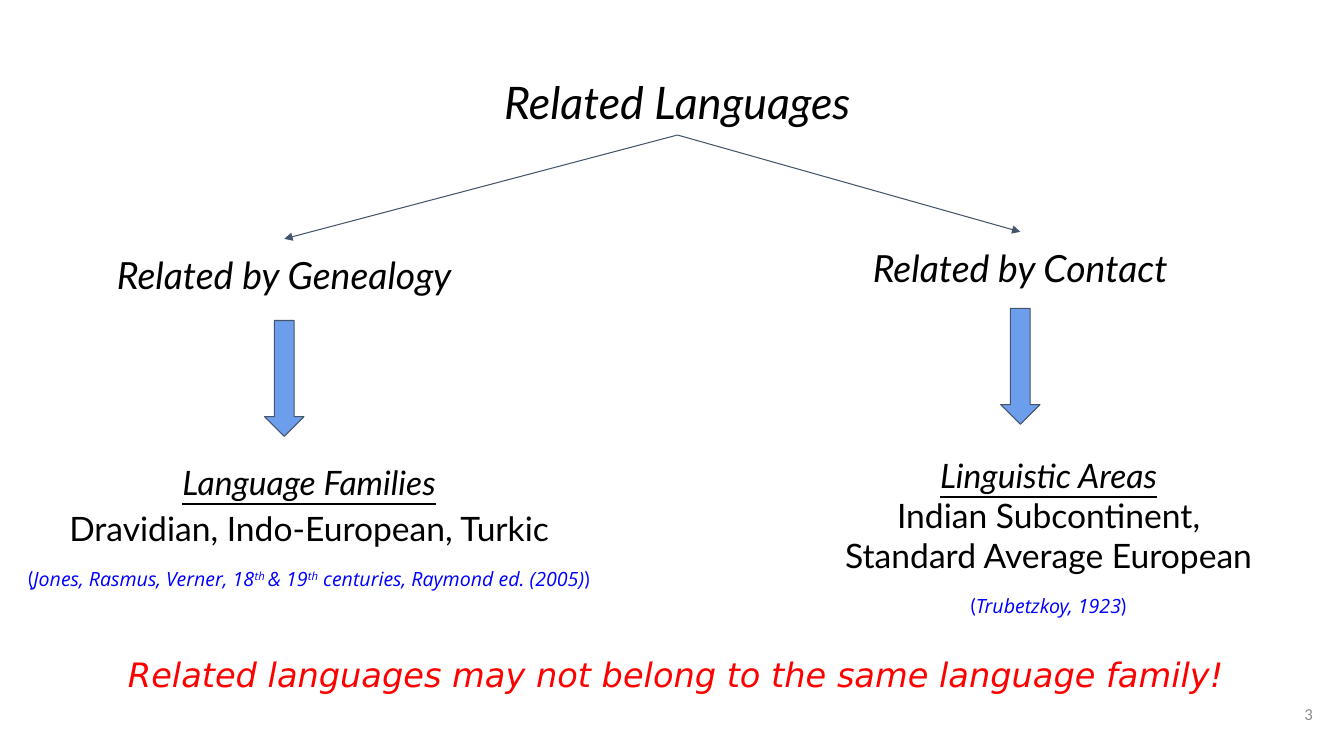
"""Build a slide that contrasts genealogical and contact relations of languages."""
import pptx
import pptx.dml.color
import pptx.enum.shapes
import pptx.enum.text
import pptx.oxml.ns
import pptx.util
from lxml import etree

SLIDE_WIDTH = pptx.util.Inches(13.33)
SLIDE_HEIGHT = pptx.util.Inches(7.5)
BLACK = pptx.dml.color.RGBColor(0x00, 0x00, 0x00)
BLUE = pptx.dml.color.RGBColor(0x00, 0x00, 0xFF)
RED = pptx.dml.color.RGBColor(0xFF, 0x00, 0x00)
GREY = pptx.dml.color.RGBColor(0x8C, 0x8C, 0x8C)
SLATE = pptx.dml.color.RGBColor(0x44, 0x54, 0x6A)
ARROW_BLUE = pptx.dml.color.RGBColor(0x6D, 0x9E, 0xEB)
ALIGN = pptx.enum.text.PP_ALIGN
ANCHOR = pptx.enum.text.MSO_ANCHOR

TITLE_CENTER = 50.41
TITLE_TOP = 8.13
LINE_BOX_HEIGHT = 9.73
HEADING_WIDTH = 43.06
ARROW_WIDTH = 2.93
ARROW_HEIGHT = 15.33
DETAILS_HEIGHT = 30.67


def across(percent):
    return round(SLIDE_WIDTH * percent / 100)


def down(percent):
    return round(SLIDE_HEIGHT * percent / 100)


def place(left, top, width, height):
    return across(left), down(top), across(width), down(height)


def add_text_box(slide, box, anchor=ANCHOR.TOP):
    frame = slide.shapes.add_textbox(*place(*box)).text_frame
    frame.word_wrap = True
    frame.vertical_anchor = anchor
    frame.margin_left = frame.margin_right = pptx.util.Inches(0.13)
    frame.margin_top = frame.margin_bottom = pptx.util.Inches(0.13)
    return frame


def add_run(paragraph, text, size, color=BLACK, font="Lato", italic=False,
            underline=False, raised=False):
    run = paragraph.add_run()
    run.text = text
    run.font.size = pptx.util.Pt(size)
    run.font.name = font
    run.font.color.rgb = color
    run.font.italic = italic
    run.font.underline = underline
    if raised:
        run.font._element.set("baseline", "30000")


def add_line(slide, box, text, size, align=ALIGN.CENTER, anchor=ANCHOR.TOP, **style):
    paragraph = add_text_box(slide, box, anchor).paragraphs[0]
    paragraph.alignment = align
    add_run(paragraph, text, size, **style)


def add_branch_line(slide, center, bottom):
    start = across(TITLE_CENTER), down(TITLE_TOP + LINE_BOX_HEIGHT)
    connector = slide.shapes.add_connector(
        pptx.enum.shapes.MSO_CONNECTOR.STRAIGHT, *start, across(center), down(bottom))
    connector.line.color.rgb = SLATE
    connector.line.width = pptx.util.Pt(0.75)
    line = connector.line._get_or_add_ln()
    etree.SubElement(line, pptx.oxml.ns.qn("a:tailEnd"), type="triangle")
    etree.SubElement(connector._element.spPr, pptx.oxml.ns.qn("a:effectLst"))


def add_down_arrow(slide, center, top):
    arrow = slide.shapes.add_shape(
        pptx.enum.shapes.MSO_SHAPE.DOWN_ARROW,
        *place(center - ARROW_WIDTH / 2, top, ARROW_WIDTH, ARROW_HEIGHT))
    arrow.shadow.inherit = False
    arrow.fill.solid()
    arrow.fill.fore_color.rgb = ARROW_BLUE
    arrow.line.color.rgb = SLATE
    arrow.line.width = pptx.util.Pt(0.75)


def add_details(slide, box, heading, examples, citation, spacing=None):
    frame = add_text_box(slide, box)
    title, body, source = (
        frame.paragraphs[0], frame.add_paragraph(), frame.add_paragraph())
    for paragraph in (title, body, source):
        paragraph.alignment = ALIGN.CENTER
    add_run(title, heading, 24, italic=True, underline=True)
    body.line_spacing = spacing
    add_run(body, examples, 24)
    source.space_before = pptx.util.Pt(13.3)
    add_run(source, "(", 14, BLUE)
    for text, raised in citation:
        add_run(source, text, 14, BLUE, "Open Sans", italic=True, raised=raised)
    add_run(source, ")", 14, BLUE)


def add_branch(slide, center, heading_top, arrow_top, heading):
    box = (center - HEADING_WIDTH / 2, heading_top, HEADING_WIDTH, LINE_BOX_HEIGHT)
    add_line(slide, box, heading, 26.7, italic=True)
    add_branch_line(slide, center, heading_top)
    add_down_arrow(slide, center, arrow_top)


def main():
    presentation = pptx.Presentation()
    presentation.slide_width = SLIDE_WIDTH
    presentation.slide_height = SLIDE_HEIGHT
    slide = presentation.slides.add_slide(presentation.slide_layouts[6])

    add_line(slide, (23.33, TITLE_TOP, 54.16, LINE_BOX_HEIGHT),
             "Related Languages", 32, italic=True)
    add_branch(slide, 21.15, 31.6, 42.4, "Related by Genealogy")
    add_branch(slide, 75.92, 30.67, 40.8, "Related by Contact")
    add_details(slide, (0.15, 59.33, 45.69, DETAILS_HEIGHT),
                "Language Families", "Dravidian, Indo-European, Turkic",
                [("Jones, Rasmus, Verner, 18", False), ("th ", True),
                 ("& 19", False), ("th", True),
                 (" centuries, Raymond ed. (2005)", False)], spacing=1.15)
    add_details(slide, (61.74, 58.4, 32.56, DETAILS_HEIGHT),
                "Linguistic Areas", "Indian Subcontinent, Standard Average European",
                [("Trubetzkoy, 1923", False)])
    add_line(slide, (8.55, 84.8, 88.45, LINE_BOX_HEIGHT),
             "Related languages may not belong to the same language family!", 24,
             align=ALIGN.LEFT, color=RED, font="DejaVu Sans", italic=True)
    add_line(slide, (92.65, 90.67, 6, 7.6), "3", 12, align=ALIGN.RIGHT,
             anchor=ANCHOR.MIDDLE, color=GREY, font="Calibri")
    presentation.save("out.pptx")


if __name__ == "__main__":
    main()
